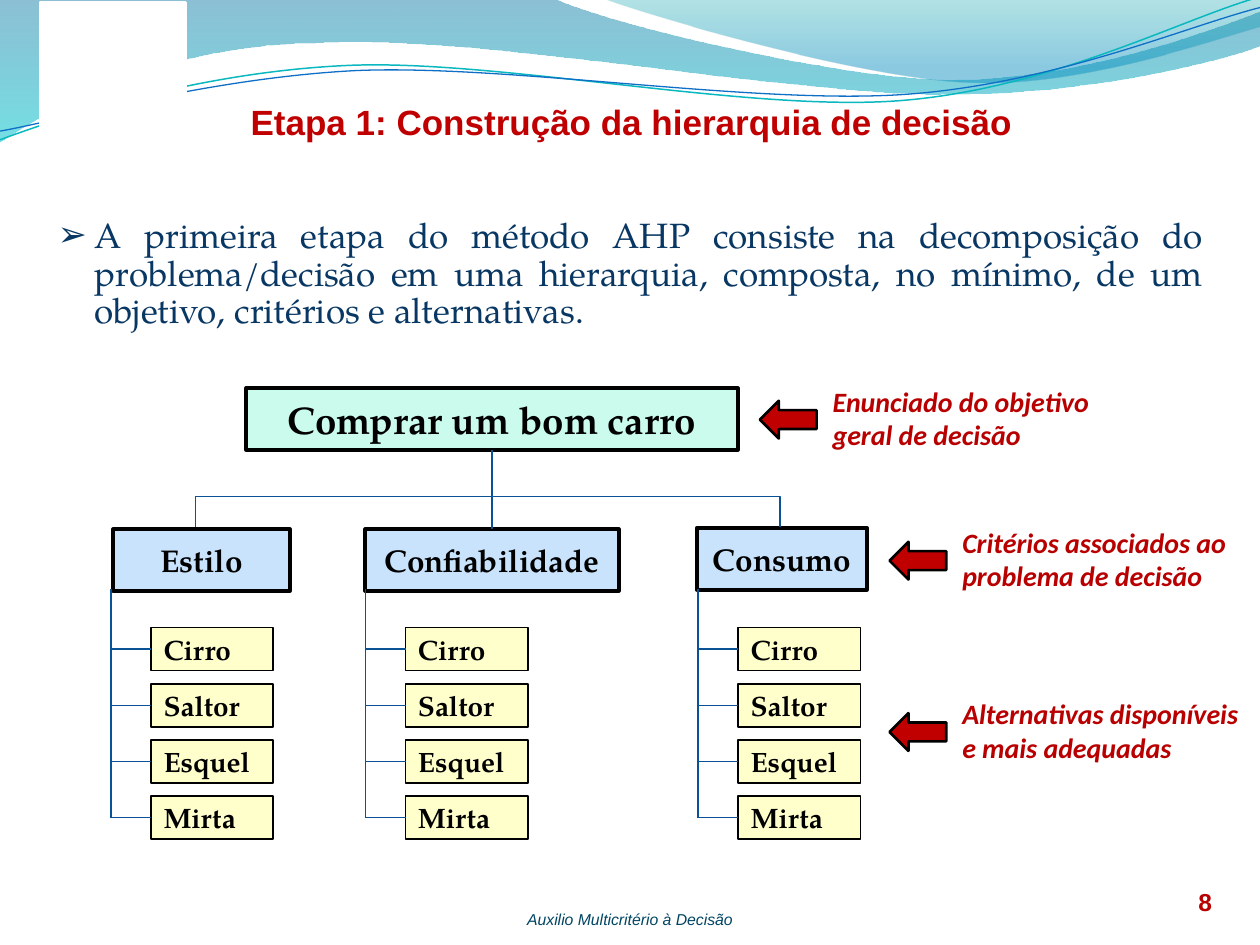
from dataclasses import dataclass
from typing import Optional

from lxml import etree
from pptx import Presentation
from pptx.dml.color import RGBColor
from pptx.enum.shapes import MSO_CONNECTOR, MSO_SHAPE
from pptx.enum.text import MSO_ANCHOR, PP_ALIGN
from pptx.oxml.ns import qn
from pptx.util import Pt

RECTANGLE, LEFT_ARROW = MSO_SHAPE.RECTANGLE, MSO_SHAPE.LEFT_ARROW
STRAIGHT = MSO_CONNECTOR.STRAIGHT
LEFT, CENTER, JUSTIFY = PP_ALIGN.LEFT, PP_ALIGN.CENTER, PP_ALIGN.JUSTIFY
MIDDLE, TOP = MSO_ANCHOR.MIDDLE, MSO_ANCHOR.TOP

WHITE, BLACK = RGBColor(255, 255, 255), RGBColor(0, 0, 0)
RED, DARK_RED = RGBColor(0xC0, 0, 0), RGBColor(0xB8, 0, 0)
NAVY, PETROL = RGBColor(0x08, 0x37, 0x63), RGBColor(0, 0x45, 0x63)
MINT, SKY = RGBColor(0xCA, 0xFB, 0xED), RGBColor(0xC8, 0xE3, 0xFB)
CREAM, TREE_BLUE = RGBColor(0xFF, 0xFF, 0xCC), RGBColor(0x09, 0x52, 0x95)
WAVE_TEAL, WAVE_BLUE = RGBColor(0x0A, 0xB8, 0xBF), RGBColor(0x0F, 0x6F, 0xC6)
SEA_TOP, SEA_BOTTOM = RGBColor(0, 0x74, 0xA1), RGBColor(0, 0xC6, 0xCF)
FOAM_TOP, FOAM_BOTTOM = RGBColor(0, 0xA1, 0xA9), RGBColor(0, 0x8B, 0xBF)

SERIF, SANS = "TeX Gyre Pagella", "Arial"
TITLE = {"name": SANS, "size": Pt(20), "bold": True}
BODY = {"name": SERIF, "size": Pt(20)}
GOAL = {"name": SERIF, "size": Pt(22), "bold": True}
CRITERION = {"name": SERIF, "size": Pt(18), "bold": True}
ALTERNATIVE = {"name": SERIF, "size": Pt(16), "bold": True}
NOTE = {"name": "Calibri", "size": Pt(16), "bold": True, "italic": True}
FOOTER = {"name": SANS, "size": Pt(9), "italic": True}
PAGE = {"name": SANS, "size": Pt(14), "bold": True}

ALTERNATIVES = ("Cirro", "Saltor", "Esquel", "Mirta")
ALTERNATIVE_TOP, ALTERNATIVE_STEP = 358.6, 32.1
BRANCH_X, BRANCH_Y = 280.4, 283.7
UNITS_PER_POINT = 100


@dataclass
class Criterion:
    name: str
    left: float
    top: float
    width: float
    trunk: float
    branch_end: Optional[float] = None


@dataclass
class Note:
    text: str
    left: float
    top: float
    width: float


@dataclass
class Wave:
    segments: list
    gradient: tuple = ()
    color: Optional[RGBColor] = None
    weight: float = 0


CRITERIA = [
    Criterion("Estilo", 64.8, 302.4, 100.8, 63.4, 111.6),
    Criterion("Confiabilidade", 208.8, 302.4, 144.7, 208.8),
    Criterion("Consumo", 398.2, 301.7, 97.2, 398.9, 445.7),
]
NOTES = [
    Note("Enunciado do objetivo geral de decisão", 434.2, 229, 167.8),
    Note("Critérios associados ao problema de decisão", 508.3, 309.6, 167.8),
    Note("Alternativas disponíveis e mais adequadas", 508.3, 407.5, 177.1),
]
WAVES = [
    Wave([[(0, -0.7)], [(316.8, -0.7)],
          [(342.7, 12.2), (478.1, 45.4), (545.8, 45.4)],
          [(614.2, 45.4), (689.8, 18.7), (720, 6.5)], [(720.7, 25.9)],
          [(707.8, 31.7), (626.4, 54.7), (537.1, 54)],
          [(447.8, 54), (275, 20.2), (185, 24.5)],
          [(92.9, 25.2), (33.1, 59.8), (-0.7, 81.4)]],
         ((0, SEA_TOP, 45), (1, SEA_BOTTOM, 55))),
    Wave([[(344.9, -0.7)], [(366.5, 7.9), (491, 44.6), (553.7, 46.8)],
          [(616.3, 49.7), (691.9, 23), (720, 15.1)], [(720, 0)]],
         ((0, FOAM_TOP, 30), (0.8, FOAM_BOTTOM, 45))),
    Wave([[(0, 79.9)], [(34.6, 67), (113.8, 41), (199.4, 37.4)],
          [(284.4, 33.8), (427, 64.1), (513.4, 57.6)],
          [(599.8, 51.1), (675.4, 10.8), (718.6, -1.4)]],
         color=WAVE_TEAL, weight=0.85),
    Wave([[(0, 74.9)], [(33.8, 69.1), (118.1, 44.6), (203.8, 40.3)],
          [(290.2, 36.7), (429.8, 59.8), (516.2, 54)],
          [(601.9, 48.2), (677.5, 15.1), (720, 4.3)]],
         color=WAVE_BLUE, weight=0.75),
]


def write(shape, text: str, style: dict, color: RGBColor, align=LEFT, anchor=TOP):
    frame = shape.text_frame
    frame.word_wrap = True
    frame.vertical_anchor = anchor
    paragraph = frame.paragraphs[0]
    paragraph.alignment = align
    run = paragraph.add_run()
    run.text = text
    for attribute, value in style.items():
        setattr(run.font, attribute, value)
    run.font.color.rgb = color
    return paragraph


def add_label(slide, box: tuple, text: str, style: dict, color: RGBColor, align=LEFT):
    label = slide.shapes.add_textbox(*map(Pt, box))
    return label, write(label, text, style, color, align)


def add_block(slide, kind, box: tuple, fill: RGBColor, line: RGBColor, weight: float):
    block = slide.shapes.add_shape(kind, *map(Pt, box))
    block.shadow.inherit = False
    block.fill.solid()
    block.fill.fore_color.rgb = fill
    block.line.color.rgb = line
    block.line.width = Pt(weight)
    return block


def add_tree_line(slide, start: tuple, end: tuple):
    link = slide.shapes.add_connector(STRAIGHT, *map(Pt, start + end))
    link.line.color.rgb = TREE_BLUE
    link.line.width = Pt(0.75)
    etree.SubElement(link._element.spPr, qn("a:effectLst"))
    return link


def add_outline(slide, segments: list, close: bool):
    scaled = [[(round(x * UNITS_PER_POINT), round(y * UNITS_PER_POINT)) for x, y in segment]
              for segment in segments]
    ends = [segment[-1] for segment in scaled]
    builder = slide.shapes.build_freeform(*ends[0], scale=Pt(1) / UNITS_PER_POINT)
    builder.add_line_segments(ends[1:], close=close)
    outline = builder.convert_to_shape()
    outline.shadow.inherit = False
    left, top = (min(values) for values in zip(*ends))
    steps = list(outline._element.spPr.iter(qn("a:lnTo")))
    for step, segment in zip(steps, scaled[1:]):
        if len(segment) == 3:
            curve = etree.Element(qn("a:cubicBezTo"))
            for x, y in segment:
                etree.SubElement(curve, qn("a:pt"), x=str(x - left), y=str(y - top))
            step.getparent().replace(step, curve)
    return outline


def add_open_line(slide, segments: list, color: RGBColor, weight: float) -> None:
    outline = add_outline(slide, segments, False)
    outline.fill.background()
    outline.line.color.rgb = color
    outline.line.width = Pt(weight)


def add_wave(slide, wave: Wave) -> None:
    if not wave.gradient:
        add_open_line(slide, wave.segments, wave.color, wave.weight)
        return
    band = add_outline(slide, wave.segments, True)
    band.line.fill.background()
    band.fill.gradient()
    band.fill.gradient_angle = 270
    for stop, (position, color, _) in zip(band.fill.gradient_stops, wave.gradient):
        stop.position = position
        stop.color.rgb = color
    tints = list(band._element.spPr.iter(qn("a:srgbClr")))
    for tint, (_, _, opacity) in zip(tints, wave.gradient):
        etree.SubElement(tint, qn("a:alpha"), val=str(opacity * 1000))


def add_criterion(slide, criterion: Criterion, goal) -> None:
    box = (criterion.left, criterion.top, criterion.width, 35.3)
    heading = add_block(slide, RECTANGLE, box, SKY, BLACK, 2.25)
    write(heading, criterion.name, CRITERION, BLACK, CENTER, MIDDLE)
    if criterion.branch_end is None:
        stem = add_tree_line(slide, (BRANCH_X, 257), (BRANCH_X, criterion.top))
        stem.begin_connect(goal, 2)
        stem.end_connect(heading, 0)
    else:
        end = criterion.branch_end
        add_open_line(slide, [[(BRANCH_X, BRANCH_Y)], [(end, BRANCH_Y)], [(end, 301)]],
                      TREE_BLUE, 0.75)
    add_tree_line(slide, (criterion.trunk, 336.6), (criterion.trunk, 467.2))
    for row, name in enumerate(ALTERNATIVES):
        top, left = ALTERNATIVE_TOP + row * ALTERNATIVE_STEP, criterion.trunk + 23
        option = add_block(slide, RECTANGLE, (left, top, 69.8, 24.6), CREAM, BLACK, 1)
        write(option, name, ALTERNATIVE, BLACK, LEFT, MIDDLE)
        middle = top + 12.3
        twig = add_tree_line(slide, (criterion.trunk, middle), (left, middle))
        twig.end_connect(option, 1)


def add_note(slide, note: Note) -> None:
    add_label(slide, (note.left + 34.5, note.top - 13, note.width, 46), note.text,
              NOTE, DARK_RED)
    add_block(slide, LEFT_ARROW, (note.left, note.top, 32.4, 21.6), RED, BLACK, 1.5)


def main() -> None:
    deck = Presentation()
    deck.slide_width, deck.slide_height = Pt(720), Pt(540)
    slide = deck.slides.add_slide(deck.slide_layouts[6])
    for wave in WAVES:
        add_wave(slide, wave)
    footer, _ = add_label(slide, (0, 519.8, 720, 10.8), "Auxilio Multicritério à Decisão",
                          FOOTER, PETROL, CENTER)
    for side in ("left", "top", "right", "bottom"):
        setattr(footer.text_frame, f"margin_{side}", Pt(0))
    _, page = add_label(slide, (658.8, 496.1, 59.8, 28.8), "8", PAGE, DARK_RED, CENTER)
    page.line_spacing = Pt(24)
    add_block(slide, RECTANGLE, (23.3, 1.4, 82.8, 70.6), WHITE, WHITE, 2)
    add_label(slide, (136.1, 54, 527, 23.8), "Etapa 1: Construção da hierarquia de decisão",
              TITLE, RED)
    _, intro = add_label(
        slide, (25.9, 121, 668.9, 116.6),
        "A primeira etapa do método AHP consiste na decomposição do problema/decisão em uma "
        "hierarquia, composta, no mínimo, de um objetivo, critérios e alternativas.",
        BODY, NAVY, JUSTIFY)
    intro.line_spacing = 0.9
    properties = intro._p.get_or_add_pPr()
    properties.set("marL", str(Pt(21)))
    properties.set("indent", str(-Pt(21)))
    etree.SubElement(properties, qn("a:buFont"), typeface=SANS)
    etree.SubElement(properties, qn("a:buChar"), char="➢")
    goal = add_block(slide, RECTANGLE, (140.75, 221.8, 280.8, 35.3), MINT, BLACK, 2.25)
    write(goal, "Comprar um bom carro", GOAL, BLACK, CENTER, MIDDLE)
    for criterion in CRITERIA:
        add_criterion(slide, criterion, goal)
    for note in NOTES:
        add_note(slide, note)
    deck.save("out.pptx")


if __name__ == "__main__":
    main()
